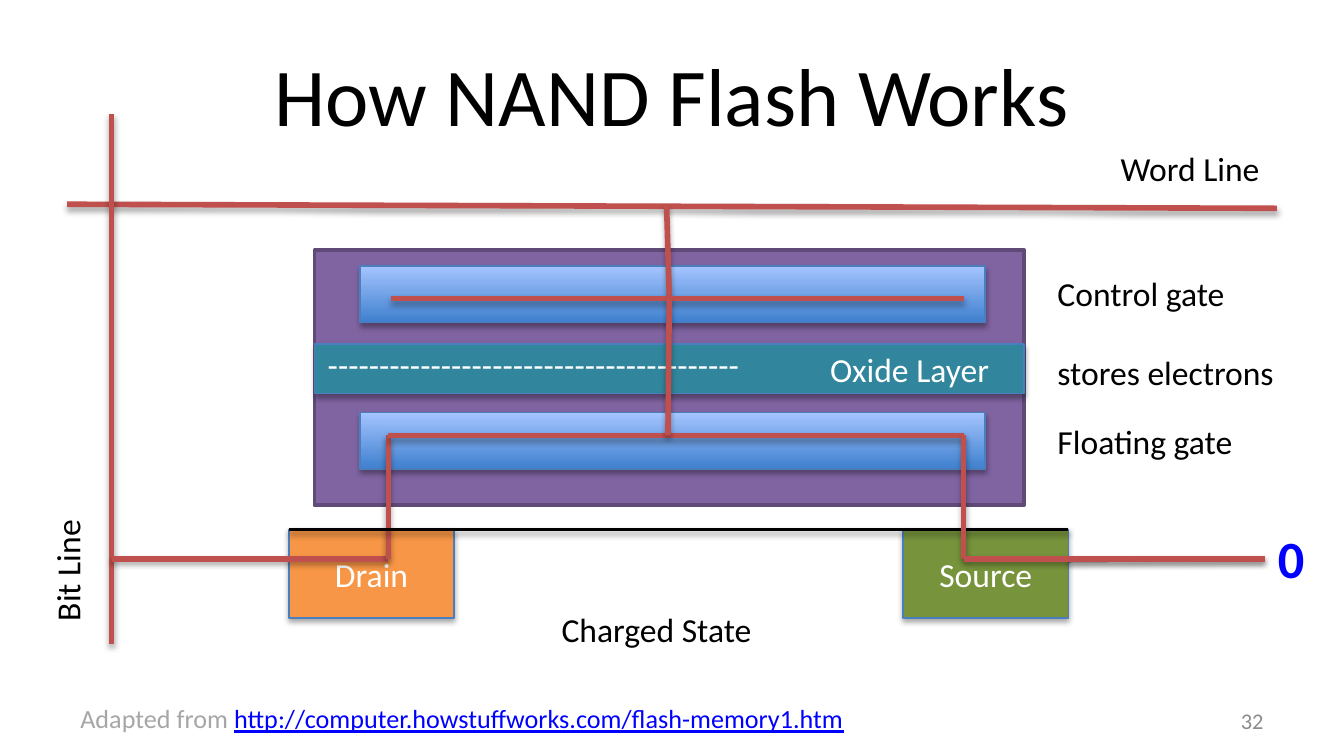
from lxml.etree import SubElement
from pptx import Presentation
from pptx.dml.color import RGBColor
from pptx.enum.shapes import MSO_CONNECTOR as Link, MSO_SHAPE as Preset
from pptx.enum.text import MSO_ANCHOR as Anchor, MSO_AUTO_SIZE as Fit, PP_ALIGN as Align
from pptx.oxml.ns import qn
from pptx.util import Inches, Pt

COLORS = {
    "ink": "000000", "white": "FFFFFF", "wire": "C0504D", "edge": "4B7EBC",
    "drain": "F79646", "source": "77933C", "oxide": "31859C",
    "body": "8064A2", "body_edge": "5F4A78",
    "gate_low": "3F80CE", "gate_high": "A4C4FF",
    "link": "0000FF", "credit": "A6A6A6", "number": "8C8C8C",
}


def rgb(name):
    return RGBColor.from_string(COLORS[name])


class CellDiagram:
    COLUMNS, ROWS = 100, 56.25
    FONT = "Calibri"

    def __init__(self, deck):
        self.column = deck.slide_width / self.COLUMNS
        self.row = deck.slide_height / self.ROWS
        self.slide = deck.slides.add_slide(deck.slide_layouts[5])

    def place(self, x, y, *size):
        scales = (self.column, self.row) * 2
        return [round(v * s) for v, s in zip((x, y, *size), scales)]

    def style(self, font, size, color, bold=None):
        font.name, font.size, font.bold = self.FONT, Pt(size), bold
        font.color.rgb = rgb(color)

    def effect(self, shape, shadow=True):
        effects = SubElement(shape._element.spPr, qn("a:effectLst"))
        if shadow:
            outer = SubElement(effects, qn("a:outerShdw"), blurRad=str(Pt(3.1)),
                               dist=str(Pt(1.8)), dir="5400000", rotWithShape="0")
            tint = SubElement(outer, qn("a:srgbClr"), val=COLORS["ink"])
            SubElement(tint, qn("a:alpha"), val="35000")

    def title(self, text, box):
        heading = self.slide.shapes.title
        heading.left, heading.top, heading.width, heading.height = self.place(*box)
        frame = heading.text_frame
        frame.text = text
        frame.vertical_anchor = Anchor.MIDDLE
        frame.paragraphs[0].alignment = Align.CENTER
        self.style(frame.paragraphs[0].font, 44, "ink")

    def block(self, box, fill, text="", edge="edge", weight=0.75, shadow=True,
              align=Align.CENTER, inset=1):
        block = self.slide.shapes.add_shape(Preset.RECTANGLE, *self.place(*box))
        if isinstance(fill, tuple):
            block.fill.gradient()
            block.fill.gradient_angle = 90
            for stop, position, color in zip(block.fill.gradient_stops, (0, 1), fill):
                stop.position, stop.color.rgb = position, rgb(color)
        else:
            block.fill.solid()
            block.fill.fore_color.rgb = rgb(fill)
        block.line.color.rgb = rgb(edge)
        block.line.width = Pt(weight)
        self.effect(block, shadow)
        if text:
            frame = block.text_frame
            frame.text = text
            frame.vertical_anchor = Anchor.MIDDLE
            frame.margin_right = round(inset * self.column)
            frame.paragraphs[0].alignment = align
            self.style(frame.paragraphs[0].font, 18, "white")

    def wire(self, start, end, color="wire", weight=3):
        wire = self.slide.shapes.add_connector(
            Link.STRAIGHT, *self.place(*start), *self.place(*end))
        wire.line.color.rgb = rgb(color)
        wire.line.width = Pt(weight)
        self.effect(wire)

    def label(self, text, box, size=18, color="ink", bold=None, turn=0):
        label = self.slide.shapes.add_textbox(*self.place(*box))
        label.rotation = turn
        frame = label.text_frame
        frame.word_wrap = False
        frame.auto_size = Fit.SHAPE_TO_FIT_TEXT
        paragraph = frame.paragraphs[0]
        paragraph.text = text
        self.style(paragraph.font, size, color, bold)
        return paragraph

    def credit(self, lead, address, box):
        paragraph = self.label(lead, box, 14, "credit")
        link = paragraph.add_run()
        link.text = address
        link.font.color.rgb = rgb("link")
        link.font.underline = True

    def page_number(self, text, box):
        number = self.slide.shapes.add_textbox(*self.place(*box))
        frame = number.text_frame
        frame.word_wrap = True
        frame.vertical_anchor = Anchor.MIDDLE
        frame.text = text
        frame.paragraphs[0].alignment = Align.RIGHT
        self.style(frame.paragraphs[0].font, 12, "number")


def main():
    deck = Presentation()
    deck.slide_width, deck.slide_height = Inches(10), Inches(5.625)
    cell = CellDiagram(deck)

    left, right, middle = 28.9, 71.7, 49.7
    word_y, control_y, floating_y, ground_y = 15.3, 22.2, 32.4, 41.6
    bit_x, surface_y, output_x = 8.3, 39.4, 94.1
    drain_x, source_x, terminal_w = 21.5, 67.2, 12.3
    source_end = source_x + terminal_w

    cell.title("How NAND Flash Works", (5, 2.3, 90, 9.4))
    cell.block((drain_x, surface_y, terminal_w, 6.6), "drain", "Drain")
    cell.block((23.4, 18.6, 52.8, 19), "body", edge="body_edge", weight=2, shadow=False)
    cell.page_number("32", (71.7, 52.1, 23.3, 3))
    for gate_y in (19.8, 30.7):
        cell.block((26.8, gate_y, 46.5, 4.2), ("gate_low", "gate_high"))
    cell.block((23.4, 25.6, 52.8, 3.7), "oxide", "Oxide Layer", align=Align.RIGHT, inset=2.6)
    cell.credit("Adapted from ", "http://computer.howstuffworks.com/flash-memory1.htm",
                (5, 51.8, 59.7, 3.4))

    cell.wire((5, 15.2), (95, 15.5))
    cell.wire((bit_x, 8.5), (bit_x, 47.9))
    cell.wire((49.6, word_y), (49.8, control_y))
    cell.wire((29.1, control_y), (right, control_y))
    cell.wire((bit_x, ground_y), (left, ground_y))
    cell.wire((left, floating_y), (left, ground_y))
    cell.wire((left, floating_y), (right, floating_y))

    cell.block((source_x, surface_y, terminal_w, 6.6), "source", "Source")
    cell.wire((drain_x, surface_y), (source_end, surface_y), "ink", 2)
    cell.wire((source_end, 41.7), (output_x, ground_y), "ink", 2)

    cell.label("Word Line", (82.4, 10.5, 12.6, 4))
    cell.label("Bit Line", (0.2, 40.4, 9.6, 4), turn=270)
    for text, y, width in (("Control gate", 19.8, 14.7),
                           ("stores electrons", 25.7, 18.4),
                           ("Floating gate", 30.8, 15.3)):
        cell.label(text, (77.7, y, width, 4))
    cell.label("0", (output_x, 38.7, 4, 5.7), 28, "link", True)
    cell.label("Charged State", (40.8, 44.8, 16.4, 4))
    cell.label("-" * 40, (23.4, 25.1, 32.9, 4), color="white")

    cell.wire((49.8, control_y), (middle, floating_y))
    cell.wire((right, floating_y), (right, ground_y))
    cell.wire((right, ground_y), (output_x, ground_y))

    deck.save("out.pptx")


if __name__ == "__main__":
    main()
